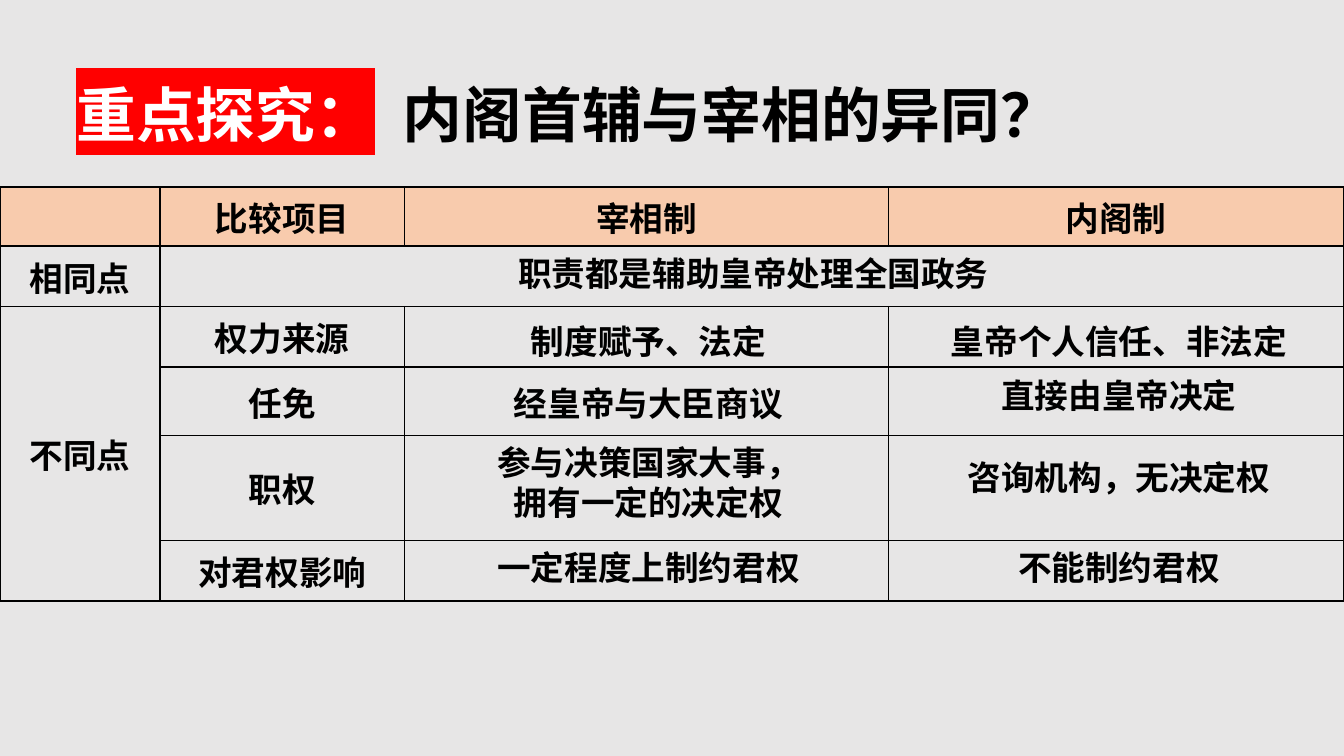
from dataclasses import dataclass

from lxml import etree
from pptx import Presentation
from pptx.dml.color import RGBColor
from pptx.enum.text import MSO_ANCHOR, MSO_AUTO_SIZE, PP_ALIGN
from pptx.oxml.ns import qn
from pptx.util import Inches, Pt

MIDDLE = MSO_ANCHOR.MIDDLE
GROW = MSO_AUTO_SIZE.SHAPE_TO_FIT_TEXT
CENTER = PP_ALIGN.CENTER


@dataclass(frozen=True)
class Theme:
    """Colours, font and type sizes of the slide."""
    back: str = "E7E6E6"
    head: str = "F8CBAD"
    mark: str = "FF0000"
    ink: str = "000000"
    light: str = "FFFFFF"
    font: str = "Noto Sans CJK SC"
    body: int = 18
    title: int = 32


THEME = Theme()
WIDTH = 10
COLS = [1.19, 1.82, 3.6, 3.39]
ROWS = [0.42, 0.45, 0.45, 0.51, 0.78, 0.45]
GRID = [
    ["", "比较项目", "宰相制", "内阁制"],
    ["相同点", "", "", ""],
    ["不同点", "权力来源", "", ""],
    ["", "任免", "", ""],
    ["", "职权", "", ""],
    ["", "对君权影响", "", ""],
]
SPAN, LEFT, RIGHT = (1.21, 8.79), (3.01, 3.63), (6.65, 3.35)
NOTES = [
    (SPAN, 1.83, "职责都是辅助皇帝处理全国政务"),
    (LEFT, 2.34, "制度赋予、法定"),
    (RIGHT, 2.34, "皇帝个人信任、非法定"),
    (LEFT, 3.24, "参与决策国家大事，\n拥有一定的决定权"),
    (RIGHT, 3.35, "咨询机构，无决定权"),
    (LEFT, 2.8, "经皇帝与大臣商议"),
    (RIGHT, 2.74, "直接由皇帝决定"),
    (LEFT, 4.02, "一定程度上制约君权"),
    (RIGHT, 4.02, "不能制约君权"),
]


def add_solid(parent, color):
    """Append a solid fill element."""
    fill = etree.SubElement(parent, qn("a:solidFill"))
    etree.SubElement(fill, qn("a:srgbClr"), val=color)


def style_run(run, size, color):
    """Set font, size and colour of a bold run."""
    font = run.font
    font.size, font.bold, font.name = Pt(size), True, THEME.font
    font.color.rgb = RGBColor.from_string(color)
    etree.SubElement(font._element, qn("a:ea"), typeface=THEME.font)


def style_text(frame):
    """Centre all body text in a frame."""
    for para in frame.paragraphs:
        para.alignment = CENTER
        for run in para.runs:
            style_run(run, THEME.body, THEME.ink)


def add_box(slide, left, top, width, height):
    """Add a wrapping text box and return its frame."""
    box = slide.shapes.add_textbox(*map(Inches, (left, top, width, height)))
    frame = box.text_frame
    frame.word_wrap, frame.auto_size = True, GROW
    return frame


def add_title(slide):
    """Add the title with its marked lead."""
    para = add_box(slide, 0.47, 0.53, 7.67, 0.64).paragraphs[0]
    tabs = etree.SubElement(para._p.get_or_add_pPr(), qn("a:tabLst"))
    etree.SubElement(tabs, qn("a:tab"), pos=str(Inches(2.43)), algn="l")
    lead, rest = para.add_run(), para.add_run()
    lead.text, rest.text = "重点探究：", "\t内阁首辅与宰相的异同？"
    style_run(lead, THEME.title, THEME.light)
    style_run(rest, THEME.title, THEME.ink)
    mark = etree.Element(qn("a:highlight"))
    etree.SubElement(mark, qn("a:srgbClr"), val=THEME.mark)
    lead.font._element.find(qn("a:solidFill")).addnext(mark)


def style_cell(cell, text, head):
    """Set text, borders and fill of a cell."""
    cell.text_frame.text = text
    style_text(cell.text_frame)
    cell.vertical_anchor = MIDDLE
    cell.margin_left = cell.margin_right = Inches(0.07)
    cell.margin_top = cell.margin_bottom = Inches(0.04)
    props = cell._tc.get_or_add_tcPr()
    for side in "LRTB":
        add_solid(etree.SubElement(props, qn(f"a:ln{side}"), w=str(Pt(1))), THEME.ink)
    if head:
        cell.fill.solid()
        cell.fill.fore_color.rgb = RGBColor.from_string(THEME.head)
    else:
        cell.fill.background()


def add_grid(slide):
    """Add the comparison table."""
    size = map(Inches, (0, 1.39, sum(COLS), sum(ROWS)))
    table = slide.shapes.add_table(len(ROWS), len(COLS), *size).table
    table.first_row = table.horz_banding = False
    for col, width in zip(table.columns, COLS):
        col.width = Inches(width)
    for row, height in zip(table.rows, ROWS):
        row.height = Inches(height)
    for i, texts in enumerate(GRID):
        for j, text in enumerate(texts):
            style_cell(table.cell(i, j), text, i == 0)
    table.cell(1, 1).merge(table.cell(1, 3))
    table.cell(2, 0).merge(table.cell(5, 0))


def add_note(slide, span, top, text):
    """Add a centred answer over the table."""
    left, width = span
    frame = add_box(slide, left, top, width, 0.71 if "\n" in text else 0.4)
    frame.text = text
    style_text(frame)


def main():
    """Build and save the slide."""
    deck = Presentation()
    deck.slide_width, deck.slide_height = Inches(WIDTH), Inches(WIDTH * 9 / 16)
    slide = deck.slides.add_slide(deck.slide_layouts[6])
    slide.background.fill.solid()
    slide.background.fill.fore_color.rgb = RGBColor.from_string(THEME.back)
    add_grid(slide)
    for span, top, text in NOTES:
        add_note(slide, span, top, text)
    add_title(slide)
    deck.save("out.pptx")


if __name__ == "__main__":
    main()
